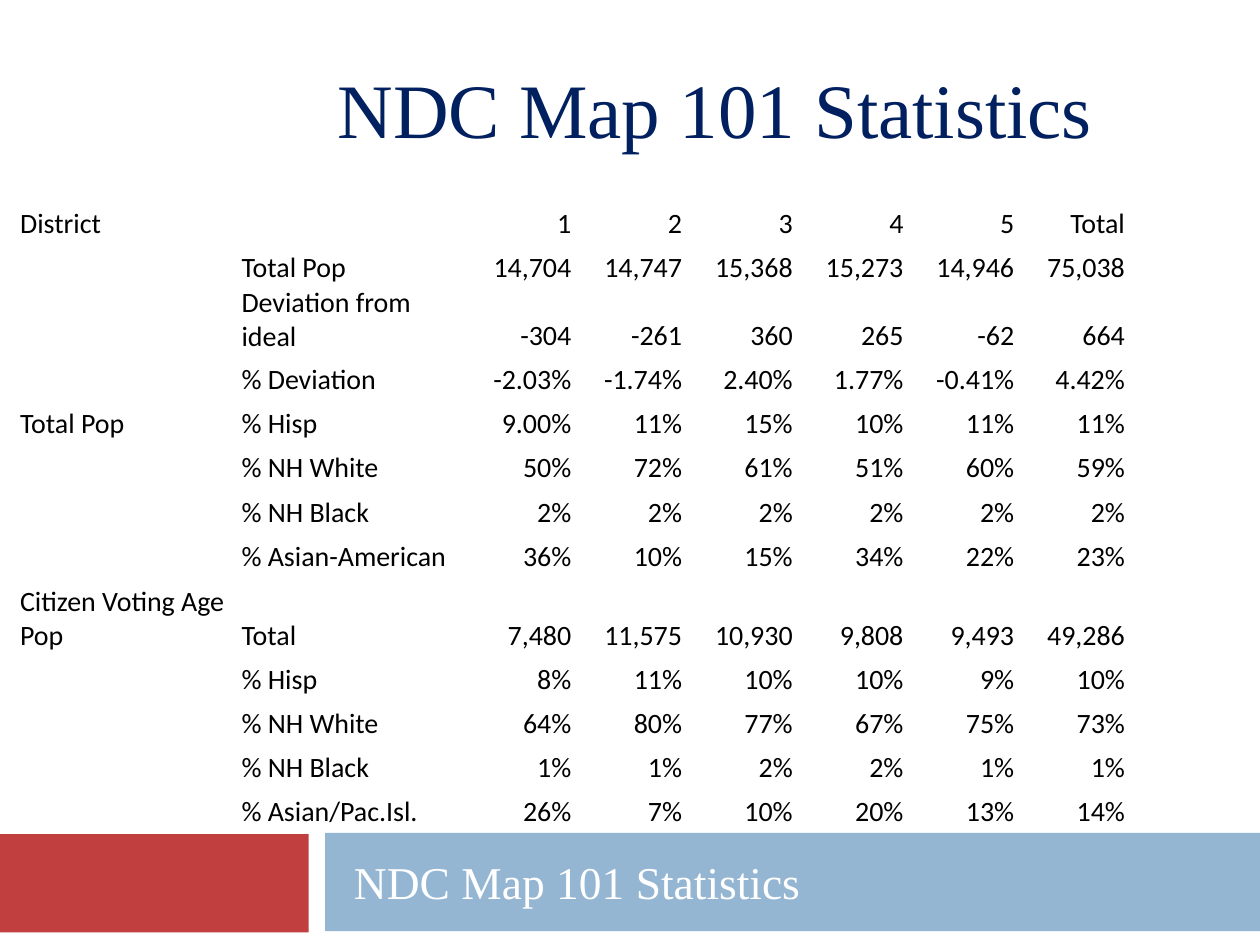
from pptx import Presentation, util as u
from pptx.dml.color import RGBColor
from pptx.enum import shapes, text

HUES = {"red": "C13F3F", "blue": "94B6D2", "navy": "002060",
        "white": "FFFFFF", "black": "000000"}
SERIF = "Times New Roman"


def write(frame, words, font="Calibri", size=16, hue="black", align="LEFT"):
    para = frame.paragraphs[0]
    para.alignment = text.PP_ALIGN[align]
    run = para.add_run()
    run.text = words
    run.font.name = font
    run.font.size = u.Pt(size)
    run.font.color.rgb = RGBColor.from_string(HUES[hue])
    return para


deck = Presentation()
deck.slide_width, deck.slide_height = u.Inches(10), u.Inches(7.5)
slide = deck.slides.add_slide(deck.slide_layouts[6])

# Footer bars
for left, top, width, hue in [(-0.01, 6.62, 2.46, "red"),
                              (2.58, 6.61, 7.42, "blue")]:
    bar = slide.shapes.add_shape(
        shapes.MSO_SHAPE.RECTANGLE, u.Inches(left), u.Inches(top),
        u.Inches(width), u.Inches(0.78))
    bar.shadow.inherit = False
    bar.fill.solid()
    bar.fill.fore_color.rgb = RGBColor.from_string(HUES[hue])
    bar.line.fill.background()

# Title and footer text
for top, width, height, size, hue, anchor, indent in [
        (0.19, 7.08, 1.08, 44, "navy", "BOTTOM", 0),
        (6.62, 7.33, 0.75, 26, "white", "MIDDLE", 0.13)]:
    box = slide.shapes.add_textbox(
        u.Inches(2.58), u.Inches(top), u.Inches(width), u.Inches(height))
    frame = box.text_frame
    frame.word_wrap = True
    frame.vertical_anchor = text.MSO_ANCHOR[anchor]
    frame.margin_left = u.Inches(0.1 + indent)
    write(frame, "NDC Map 101 Statistics", font=SERIF, size=size, hue=hue)

# Table rows: group, label, five districts and total
ROWS = [
    ("District", "", "1 2 3 4 5 Total"),
    ("", "Total Pop", "14,704 14,747 15,368 15,273 14,946 75,038"),
    ("", "Deviation from ideal", "-304 -261 360 265 -62 664"),
    ("", "% Deviation", "-2.03% -1.74% 2.40% 1.77% -0.41% 4.42%"),
    ("Total Pop", "% Hisp", "9.00% 11% 15% 10% 11% 11%"),
    ("", "% NH White", "50% 72% 61% 51% 60% 59%"),
    ("", "% NH Black", "2% 2% 2% 2% 2% 2%"),
    ("", "% Asian-American", "36% 10% 15% 34% 22% 23%"),
    ("Citizen Voting Age Pop", "Total", "7,480 11,575 10,930 9,808 9,493 49,286"),
    ("", "% Hisp", "8% 11% 10% 10% 9% 10%"),
    ("", "% NH White", "64% 80% 77% 67% 75% 73%"),
    ("", "% NH Black", "1% 1% 2% 2% 1% 1%"),
    ("", "% Asian/Pac.Isl.", "26% 7% 10% 20% 13% 14%"),
]
TALL = 8
WIDE = 9  # labels longer than this span two columns

grid = slide.shapes.add_table(
    len(ROWS), 10, u.Inches(0.15), u.Inches(1.56),
    u.Inches(8.79), u.Inches(5.02)).table
grid.first_row = grid.horz_banding = False
for col in grid.columns:
    col.width = u.Inches(8.79 / 10)

for r, (group, label, stats) in enumerate(ROWS):
    grid.rows[r].height = u.Inches(0.63 if r == TALL else 0.35)
    line = [group, "", label, ""] + stats.split()
    for c, words in enumerate(line):
        cell = grid.cell(r, c)
        cell.fill.background()
        cell.vertical_anchor = text.MSO_ANCHOR.BOTTOM
        cell.margin_left = cell.margin_right = u.Inches(0.01)
        cell.margin_top, cell.margin_bottom = u.Inches(0.01), 0
        if words:
            write(cell.text_frame, words, align="RIGHT" if c > 3 else "LEFT")
            if c < 4 and len(words) > WIDE:
                cell.merge(grid.cell(r, c + 1))

deck.save("out.pptx")
